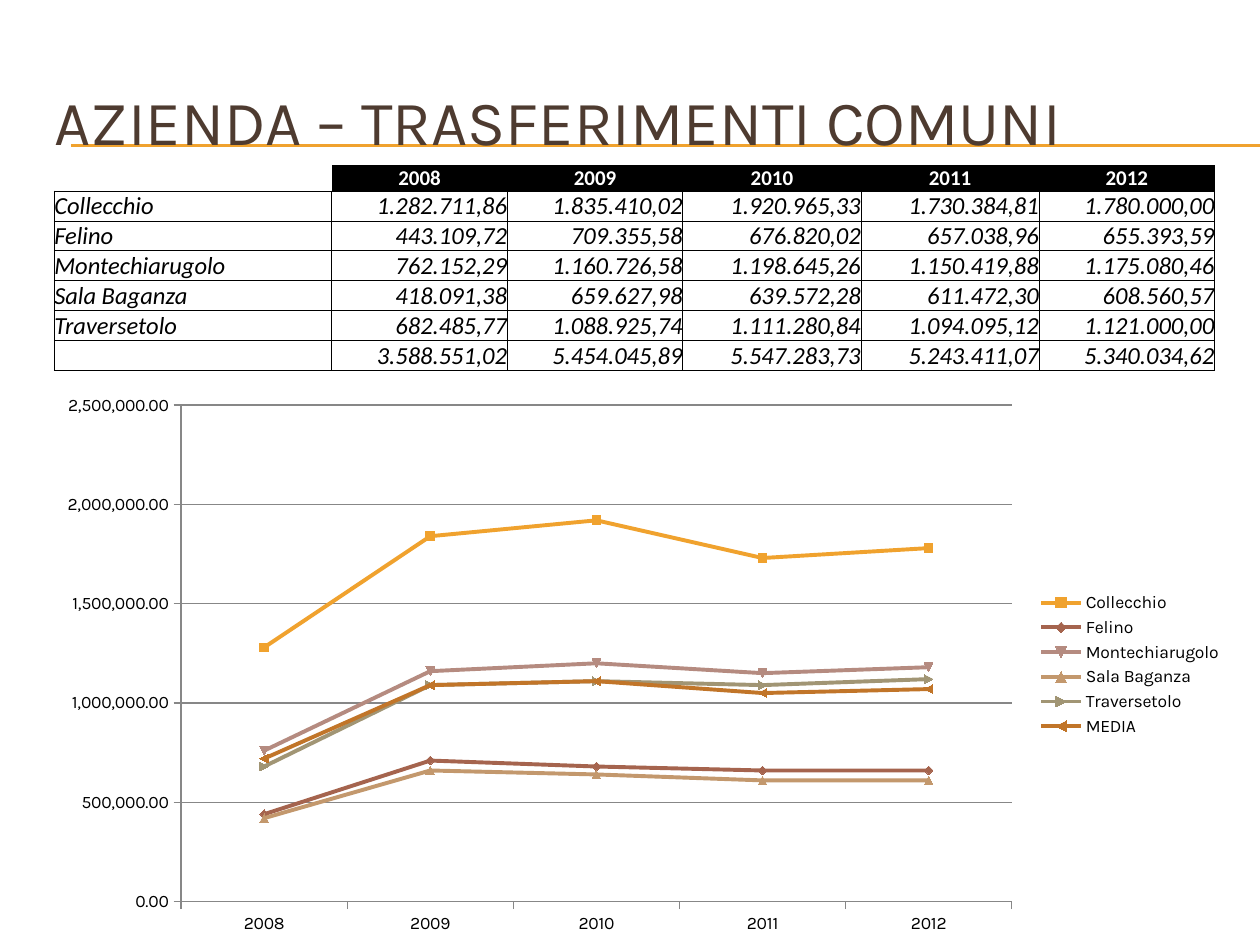
import dataclasses

import pptx
import pptx.chart.data
import pptx.dml.color
import pptx.enum.chart
import pptx.enum.shapes
import pptx.enum.text
import pptx.oxml
import pptx.oxml.xmlchemy
import pptx.util
from pptx.util import Pt


def rgb(code):
    return pptx.dml.color.RGBColor.from_string(code)


@dataclasses.dataclass(frozen=True)
class Theme:
    title_font: str = "Karla"
    table_font: str = "Calibri"
    title_size: int = 36
    header_size: int = 12
    body_size: int = 14
    chart_size: int = 10
    title: str = "4E3B30"
    rule: str = "F0A22E"
    black: str = "000000"
    white: str = "FFFFFF"
    grid: str = "878787"
    series: tuple = ("F0A22E", "A5644E", "B58B80", "C3986D", "A19574", "C17529")


THEME = Theme()
YEARS = ["2008", "2009", "2010", "2011", "2012"]
TRANSFERS = [
    ["Collecchio", "1.282.711,86", "1.835.410,02", "1.920.965,33", "1.730.384,81", "1.780.000,00"],
    ["Felino", "443.109,72", "709.355,58", "676.820,02", "657.038,96", "655.393,59"],
    ["Montechiarugolo", "762.152,29", "1.160.726,58", "1.198.645,26", "1.150.419,88", "1.175.080,46"],
    ["Sala Baganza", "418.091,38", "659.627,98", "639.572,28", "611.472,30", "608.560,57"],
    ["Traversetolo", "682.485,77", "1.088.925,74", "1.111.280,84", "1.094.095,12", "1.121.000,00"],
    ["", "3.588.551,02", "5.454.045,89", "5.547.283,73", "5.243.411,07", "5.340.034,62"],
]
CHART_SERIES = {
    "Collecchio": (1280000, 1840000, 1920000, 1730000, 1780000),
    "Felino": (440000, 710000, 680000, 660000, 660000),
    "Montechiarugolo": (760000, 1160000, 1200000, 1150000, 1180000),
    "Sala Baganza": (420000, 660000, 640000, 610000, 610000),
    "Traversetolo": (680000, 1090000, 1110000, 1090000, 1120000),
    "MEDIA": (720000, 1090000, 1110000, 1050000, 1070000),
}


def add_heading(slide, left, top, width, height):
    """Fill the title placeholder and set it over a double rule."""
    for offset in (46.8, 47.5):
        y = Pt(top + offset)
        rule = slide.shapes.add_connector(
            pptx.enum.shapes.MSO_CONNECTOR.STRAIGHT, Pt(left + 16.5), y, Pt(720), y)
        rule.line.color.rgb = rgb(THEME.rule)
        rule.line.width = Pt(0.75)
        rule._element.spPr.append(pptx.oxml.xmlchemy.OxmlElement("a:effectLst"))

    title = slide.shapes.title
    title.left, title.top, title.width, title.height = map(Pt, (left, top, width, height))
    slide.shapes._spTree.append(title._element)
    title.text_frame.vertical_anchor = pptx.enum.text.MSO_ANCHOR.MIDDLE
    title.text_frame.word_wrap = True
    paragraph = title.text_frame.paragraphs[0]
    paragraph.alignment = pptx.enum.text.PP_ALIGN.LEFT
    run = paragraph.add_run()
    run.text = "AZIENDA – TRASFERIMENTI COMUNI"
    run.font.name = THEME.title_font
    run.font.size = Pt(THEME.title_size)
    run.font.color.rgb = rgb(THEME.title)


def set_borders(cell, visible_sides):
    """Draw the named sides (L, R, T, B) in black and hide the others."""
    properties = cell._tc.get_or_add_tcPr()
    for position, side in enumerate("LRTB"):
        fill = (f'<a:solidFill><a:srgbClr val="{THEME.black}"/></a:solidFill>'
                if side in visible_sides else "<a:noFill/>")
        properties.insert(position, pptx.oxml.parse_xml(
            '<a:ln%s xmlns:a="http://schemas.openxmlformats.org/drawingml/2006/main" '
            'w="%d">%s</a:ln%s>' % (side, Pt(0.5), fill, side)))


def fill_cell(cell, text, alignment, header):
    cell.margin_left = cell.margin_right = cell.margin_top = cell.margin_bottom = 0
    cell.vertical_anchor = pptx.enum.text.MSO_ANCHOR.BOTTOM
    if header and text:
        cell.fill.solid()
        cell.fill.fore_color.rgb = rgb(THEME.black)
    else:
        cell.fill.background()
    set_borders(cell, "B" if header else "LRTB")

    size = Pt(THEME.header_size if header else THEME.body_size)
    paragraph = cell.text_frame.paragraphs[0]
    paragraph.alignment = alignment
    if not text:
        end = pptx.oxml.xmlchemy.OxmlElement("a:endParaRPr")
        end.set("sz", str(int(size.pt * 100)))
        paragraph._p.append(end)
        return
    run = paragraph.add_run()
    run.text = text
    run.font.name = THEME.table_font
    run.font.size = size
    run.font.bold = header
    run.font.italic = not header
    run.font.color.rgb = rgb(THEME.white if header else THEME.black)


def add_transfer_table(slide, left, top, width, height):
    rows = [["", *YEARS], *TRANSFERS]
    frame = slide.shapes.add_table(
        len(rows), len(rows[0]), Pt(left), Pt(top), Pt(width), Pt(height))
    table = frame.table
    table.first_row = table.horz_banding = False
    for column, column_width in zip(table.columns, (158.6, 100.3, 100.3, 101.8, 101.8, 100.3)):
        column.width = Pt(column_width)
    header_height = 14.4
    for index, values in enumerate(rows):
        header = index == 0
        table.rows[index].height = Pt(
            header_height if header else round((height - header_height) / len(TRANSFERS), 2))
        for column, text in enumerate(values):
            align = pptx.enum.text.PP_ALIGN
            alignment = align.LEFT if column == 0 else align.CENTER if header else align.RIGHT
            fill_cell(table.cell(index, column), text, alignment, header)


def add_transfer_chart(slide, left, top, width, height):
    data = pptx.chart.data.CategoryChartData(number_format="#,##0.00")
    data.categories = YEARS
    for name, values in CHART_SERIES.items():
        data.add_series(name, values)
    chart = slide.shapes.add_chart(
        pptx.enum.chart.XL_CHART_TYPE.LINE_MARKERS,
        Pt(left), Pt(top), Pt(width), Pt(height), data).chart
    chart.font.name = THEME.title_font
    chart.font.size = Pt(THEME.chart_size)
    chart.font.color.rgb = rgb(THEME.black)
    chart.has_title = False
    chart.has_legend = True
    chart.legend.position = pptx.enum.chart.XL_LEGEND_POSITION.RIGHT
    chart.legend.include_in_layout = False

    plot = chart.plots[0]
    plot.vary_by_categories = False
    for series, color in zip(plot.series, THEME.series):
        series.smooth = False
        series.format.line.color.rgb = rgb(color)
        series.format.line.width = Pt(2.25)
        series.marker.format.fill.solid()
        series.marker.format.fill.fore_color.rgb = rgb(color)
        series.marker.format.line.color.rgb = rgb(color)

    value_axis = chart.value_axis
    value_axis.minimum_scale, value_axis.maximum_scale = 0, 2500000
    value_axis.major_unit = 500000
    value_axis.has_major_gridlines = True
    value_axis.tick_labels.number_format = "#,##0.00"
    value_axis.tick_labels.number_format_is_linked = False
    for axis in (value_axis, chart.category_axis):
        axis.major_tick_mark = pptx.enum.chart.XL_TICK_MARK.OUTSIDE
    for part in (value_axis, chart.category_axis, value_axis.major_gridlines):
        part.format.line.color.rgb = rgb(THEME.grid)
        part.format.line.width = Pt(0.75)


def main():
    presentation = pptx.Presentation()
    presentation.slide_width, presentation.slide_height = Pt(720), Pt(540)
    slide = presentation.slides.add_slide(presentation.slide_layouts[5])
    add_heading(slide, 24, 36, 684, 66)
    add_transfer_chart(slide, 25, 219.5, 680.5, 320.5)
    add_transfer_table(slide, 31, 94.5, 663.1, 117)
    presentation.save("out.pptx")


if __name__ == "__main__":
    main()
